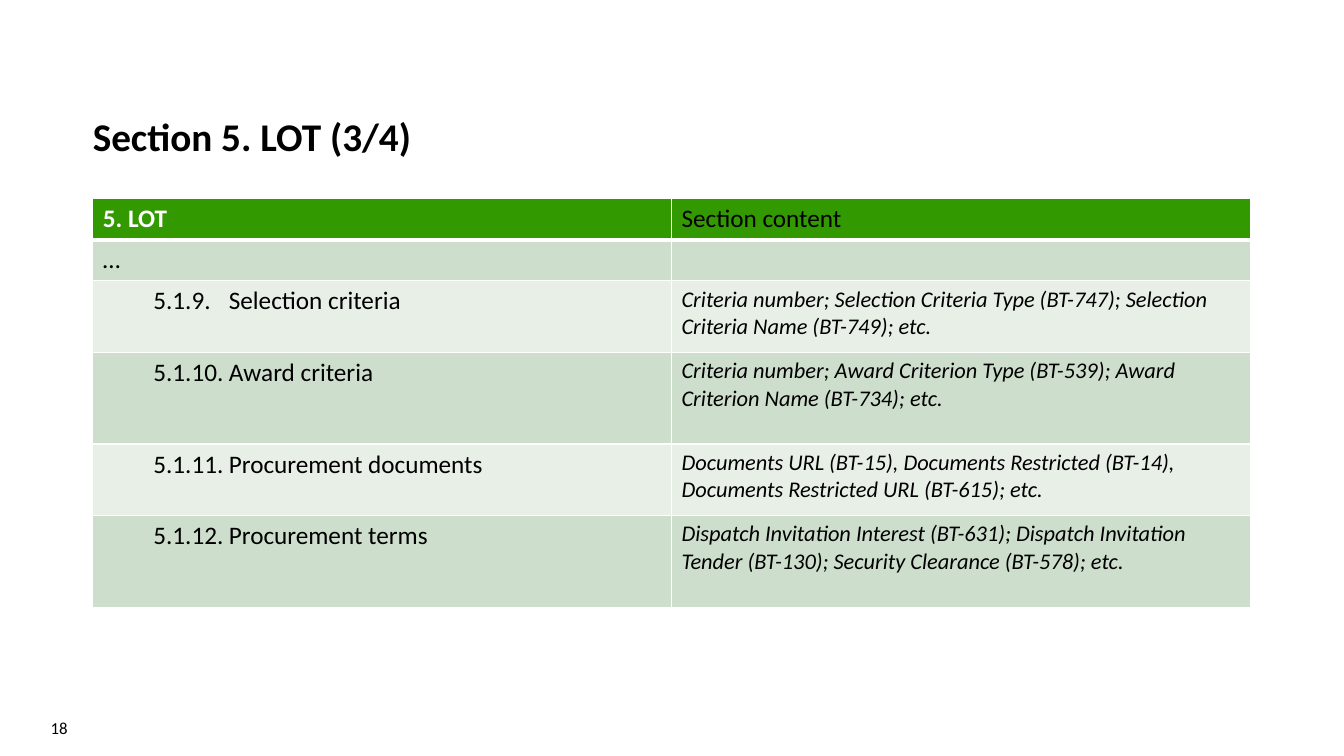
from dataclasses import dataclass

from lxml import etree
from pptx import Presentation
from pptx.dml.color import RGBColor
from pptx.enum.text import MSO_ANCHOR, MSO_AUTO_SIZE, PP_ALIGN
from pptx.oxml.ns import qn
from pptx.util import Pt

PX = 9144
BOTTOM, MIDDLE = MSO_ANCHOR.BOTTOM, MSO_ANCHOR.MIDDLE
LEFT, RIGHT = PP_ALIGN.LEFT, PP_ALIGN.RIGHT
NO_FIT = MSO_AUTO_SIZE.NONE
TITLE_ONLY = 5
EDGES = ("lnL", "lnR", "lnT", "lnB")


@dataclass(frozen=True)
class Theme:
    """Colours, font and type sizes of the slide."""
    font: str = "Calibri"
    ink: str = "000000"
    paper: str = "FFFFFF"
    header: str = "339900"
    bands: tuple = ("CEDECC", "E8EFE7")
    title_size: int = 28
    section_size: int = 18
    content_size: int = 16
    number_size: int = 12


THEME = Theme()
SECTIONS = [
    ("5. LOT", "Section content", 41),
    ("…", "", 40),
    ("5.1.9.\tSelection criteria",
     "Criteria number; Selection Criteria Type (BT-747); "
     "Selection Criteria Name (BT-749); etc.", 71),
    ("5.1.10.\tAward criteria",
     "Criteria number; Award Criterion Type (BT-539); "
     "Award Criterion Name (BT-734); etc.", 91),
    ("5.1.11.\tProcurement documents",
     "Documents URL (BT-15), Documents Restricted (BT-14), "
     "Documents Restricted URL (BT-615); etc.", 71),
    ("5.1.12.\tProcurement terms",
     "Dispatch Invitation Interest (BT-631); Dispatch Invitation Tender (BT-130); "
     "Security Clearance (BT-578); etc.", 91),
]


def px(*lengths):
    """Turn whole pixels into EMU."""
    return [length * PX for length in lengths]


def apply(target, **values):
    """Set each given attribute on the target."""
    for name, value in values.items():
        setattr(target, name, value)


def write(frame, wording, size, color=THEME.ink, bold=False, italic=False):
    """Write one formatted paragraph and return it."""
    paragraph = frame.paragraphs[0]
    run = paragraph.add_run()
    run.text = wording
    apply(run.font, name=THEME.font, size=Pt(size), bold=bold, italic=italic)
    run.font.color.rgb = RGBColor.from_string(color)
    return paragraph


def add_title(slide, wording):
    """Place and fill the title placeholder."""
    title = slide.shapes.title
    left, top, width, height = px(92, 14, 1148, 145)
    apply(title, left=left, top=top, width=width, height=height)
    apply(title.text_frame, vertical_anchor=BOTTOM, auto_size=NO_FIT, word_wrap=True,
          margin_left=0, margin_right=0, margin_top=5 * PX, margin_bottom=0)
    heading = write(title.text_frame, wording, THEME.title_size, bold=True)
    apply(heading, alignment=LEFT, line_spacing=0.9)


def style_cell(cell, fill, widths):
    """Fill a cell and draw its borders, widths given per edge in points."""
    cell.fill.solid()
    cell.fill.fore_color.rgb = RGBColor.from_string(fill)
    properties = cell._tc.get_or_add_tcPr()
    for position, edge in enumerate(EDGES):
        border = etree.Element(qn(f"a:{edge}"), w=str(Pt(widths.get(edge, 1))))
        solid = etree.SubElement(border, qn("a:solidFill"))
        etree.SubElement(solid, qn("a:srgbClr"), val=THEME.paper)
        properties.insert(position, border)


def hang(paragraph):
    """Indent a numbered section so its name starts at the hanging margin."""
    margin, indent = px(125, -75)
    properties = paragraph._p.get_or_add_pPr()
    for name, value in {"marL": margin, "indent": indent, "lvl": 1}.items():
        properties.set(name, str(value))


def add_sections(slide, sections):
    """Add the table of sections and their content."""
    heights = [height for _, _, height in sections]
    frame = slide.shapes.add_table(len(sections), 2, *px(92, 197, 1148, sum(heights)))
    table = frame.table
    for column in table.columns:
        column.width = 574 * PX
    for index, (section, content, height) in enumerate(sections):
        header = index == 0
        table.rows[index].height = height * PX
        fill = THEME.header if header else THEME.bands[(index - 1) % 2]
        widths = {0: {"lnB": 3}, 1: {"lnT": 3}}.get(index, {})
        section_cell, content_cell = table.rows[index].cells
        for cell in (section_cell, content_cell):
            style_cell(cell, fill, widths)
        name = write(section_cell.text_frame, section, THEME.section_size,
                     THEME.paper if header else THEME.ink, bold=header)
        if "\t" in section:
            hang(name)
        if content:
            size = THEME.section_size if header else THEME.content_size
            write(content_cell.text_frame, content, size, italic=not header)


def add_page_number(slide, number):
    """Add the page number at the bottom left."""
    frame = slide.shapes.add_textbox(*px(0, 702, 77, 40)).text_frame
    apply(frame, word_wrap=True, vertical_anchor=MIDDLE)
    write(frame, number, THEME.number_size).alignment = RIGHT


def main():
    """Build and save the slide."""
    presentation = Presentation()
    width, height = px(1333, 750)
    apply(presentation, slide_width=width, slide_height=height)
    slide = presentation.slides.add_slide(presentation.slide_layouts[TITLE_ONLY])
    add_title(slide, "Section 5. LOT (3/4)")
    add_sections(slide, SECTIONS)
    add_page_number(slide, "18")
    presentation.save("out.pptx")


if __name__ == "__main__":
    main()
